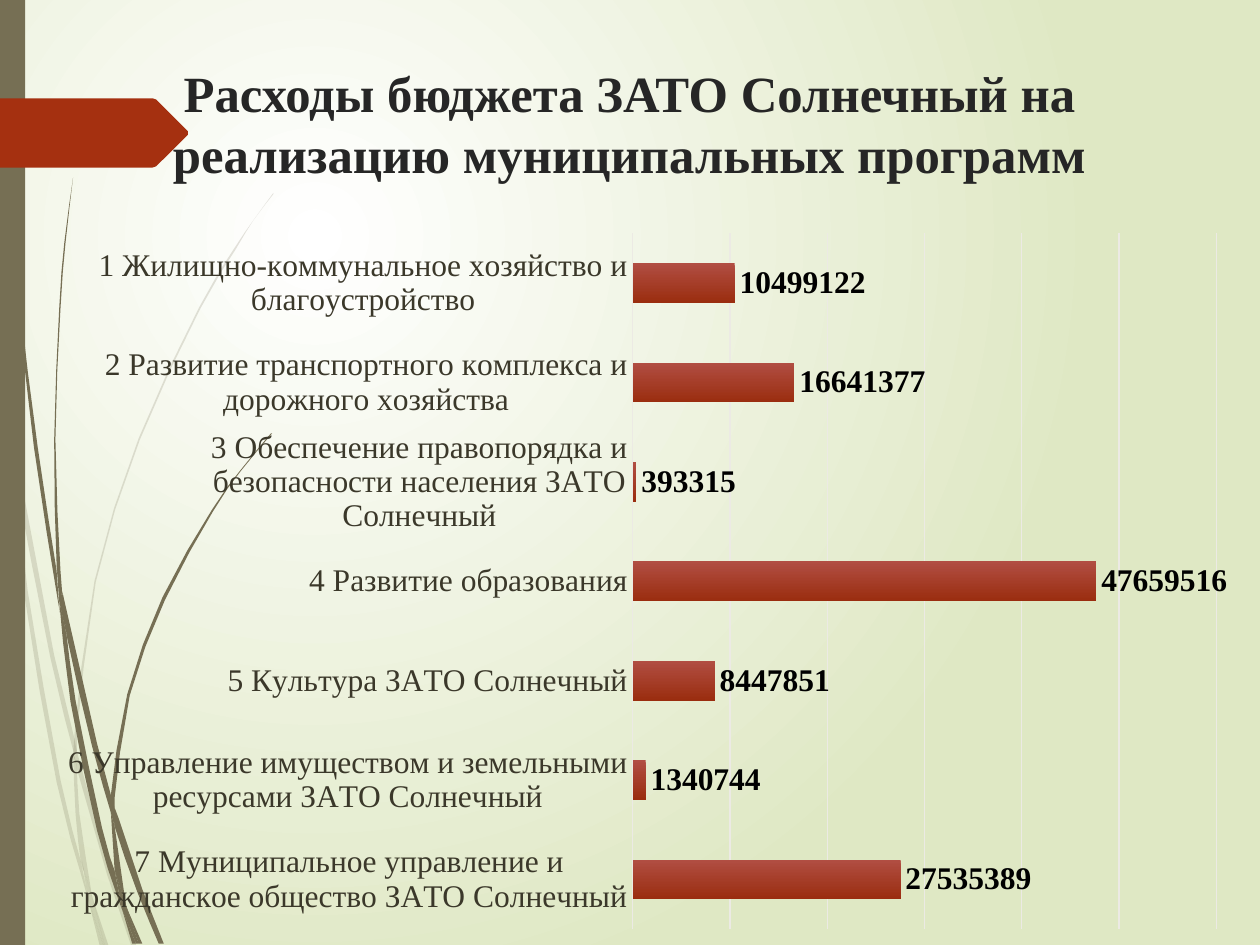
import lxml.etree
import pptx
import pptx.chart.data
import pptx.dml.color
import pptx.enum.chart
import pptx.enum.shapes
import pptx.enum.text
import pptx.oxml
import pptx.oxml.ns
import pptx.util
from pptx.util import Inches

COLORS = {
    "white": "FFFFFF", "meadow": "DFE8C4", "olive": "766F54", "rust": "A53010",
    "title": "262626", "label": "3B382A", "grid": "ECEAE4", "black": "000000",
    "bar_top": "B14E43", "bar_bottom": "9A2D0F",
}
SERIF = "Times New Roman"
TITLE = "Расходы бюджета ЗАТО Солнечный на реализацию муниципальных программ"
PROGRAMS = [
    ("7 Муниципальное управление и гражданское общество ЗАТО Солнечный", 27535389),
    ("6 Управление имуществом и земельными ресурсами ЗАТО Солнечный", 1340744),
    ("5 Культура ЗАТО Солнечный", 8447851),
    ("4 Развитие образования", 47659516),
    ("3 Обеспечение правопорядка и безопасности населения ЗАТО Солнечный", 393315),
    ("2 Развитие транспортного комплекса и дорожного хозяйства", 16641377),
    ("1 Жилищно-коммунальное хозяйство и благоустройство", 10499122),
]
PALE_STRANDS = [
    ([(0.08, 3.5), (0.06, 3.22), (0, 2.82)], [(0, 2.99), (0.07, 3.44), (0.08, 3.5)]),
    ([(0.1, 3.45), (0.43, 5.2), (0.59, 5.86)],
     [(0.59, 5.99), (0.4, 5.22), (0.12, 3.76), (0.1, 3.45)]),
    ([(0.61, 5.96), (0.64, 6.07), (0.88, 6.92), (1.08, 7.5)],
     [(1.04, 7.5), (0.85, 6.94), (0.61, 6.1)]),
    ([(0.73, 7.11), (0.83, 7.5)], [(0.86, 7.5), (0.73, 7.11)]),
    ([(0.08, 3.5), (0.12, 3.76), (0.22, 4.69), (0.48, 6.19), (0.64, 6.83), (0.7, 7.14)],
     [(0.64, 6.93), (0.45, 6.21), (0.19, 4.7), (0.08, 3.5)]),
    ([(0.58, 5.99), (0.61, 6.08), (0.63, 6.46), (0.73, 7.11)],
     [(0.67, 6.92), (0.64, 6.83), (0.6, 6.46), (0.58, 5.99)]),
    ([(2.17, 1.53), (2.01, 1.75), (1.86, 1.97), (1.58, 2.44), (1.1, 3.48), (0.75, 4.61),
      (0.59, 5.84), (0.61, 5.96)],
     [(0.61, 5.84), (0.76, 4.62), (1.11, 3.49), (1.59, 2.45), (1.87, 1.98),
      (2.01, 1.75), (2.17, 1.54)]),
    ([(0.7, 7.14), (0.79, 7.5)], [(0.82, 7.5), (0.7, 7.14)]),
    ([(0.59, 5.86), (0.61, 5.96), (0.61, 6.1)], [(0.61, 6.08), (0.58, 5.99)]),
    ([(0.65, 6.83), (0.7, 7.14), (0.82, 7.5)], [(0.83, 7.5), (0.73, 7.11), (0.67, 6.92)]),
]
DARK_STRANDS = [
    ([(0.02, 0), (0.03, 0.48), (0.05, 1.1), (0.14, 2.33), (0.27, 3.55), (0.46, 4.77), (0.47, 4.81)],
     [(0.45, 4.53), (0.3, 3.55), (0.15, 2.32), (0.06, 1.09), (0.04, 0.48), (0.03, 0)]),
    ([(0.5, 4.72), (0.53, 5.05), (0.73, 5.92), (0.88, 6.45)],
     [(0.88, 6.31), (0.77, 5.9), (0.5, 4.72)]),
    ([(0.91, 6.41), (0.91, 6.56), (1.09, 7.08), (1.26, 7.49)],
     [(1.3, 7.49), (1.13, 7.06), (0.94, 6.49)]),
    ([(0.47, 4.77), (0.56, 5.57), (0.77, 6.59), (0.92, 7.08), (0.97, 7.22)],
     [(0.91, 6.91), (0.81, 6.57), (0.6, 5.56), (0.53, 5.05), (0.47, 4.77)]),
    ([(0.58, 1.41), (0.51, 1.93), (0.47, 2.45), (0.43, 3.49), (0.45, 4.49), (0.49, 4.72)],
     [(0.5, 4.72), (0.48, 4.53), (0.44, 3.49), (0.48, 2.45), (0.52, 1.93), (0.58, 1.41)]),
    ([(1, 7.19), (1.1, 7.49)], [(1.13, 7.49), (1, 7.19)]),
    ([(0.45, 4.49), (0.47, 4.77), (0.53, 5.05)], [(0.5, 4.72), (0.49, 4.72), (0.45, 4.49)]),
    ([(2.15, 3.44), (1.91, 3.73), (1.68, 4.05), (1.29, 4.74), (1.01, 5.51), (0.88, 6.31), (0.91, 6.41)],
     [(0.91, 6.33), (1.03, 5.52), (1.31, 4.76), (1.69, 4.06), (1.91, 3.74), (2.16, 3.44)]),
    ([(0.97, 7.22), (1.05, 7.49)], [(1.08, 7.49), (0.97, 7.22)]),
    ([(0.88, 6.45), (0.91, 6.91), (1, 7.19)], [(0.91, 6.56), (0.88, 6.45)]),
    ([(0.88, 6.31), (0.88, 6.45), (0.91, 6.56)], [(0.91, 6.41), (0.88, 6.31)]),
    ([(0.91, 6.91), (0.97, 7.22), (1.08, 7.49)], [(1.1, 7.49), (0.96, 7.06), (0.91, 6.91)]),
]
ARROW = [(0, 0.78), (1.21, 0.78), (1.24, 0.79), (1.49, 1.04), (1.49, 1.07), (1.24, 1.32), (1.21, 1.33), (0, 1.33)]
PLOT = {"x": 0.482, "y": 0.052, "w": 0.494, "h": 0.948}


def rgb(name):
    return pptx.dml.color.RGBColor.from_string(COLORS[name])


def style_font(font, size, color, bold=False):
    font.name, font.size, font.bold = SERIF, pptx.util.Pt(size), bold
    font.color.rgb = rgb(color)


def paint(shape, color, alpha=None):
    shape.shadow.inherit = False
    shape.fill.solid()
    shape.fill.fore_color.rgb = rgb(color)
    shape.line.fill.background()
    if alpha:
        swatch = shape.fill._xPr.find(".//" + pptx.oxml.ns.qn("a:srgbClr"))
        lxml.etree.SubElement(swatch, pptx.oxml.ns.qn("a:alpha"), val=str(alpha * 1000))


def gradient(fill, first, last):
    fill.gradient()
    for stop, color, position in zip(fill.gradient_stops, (first, last), (0, 1)):
        stop.color.rgb = rgb(color)
        stop.position = position


def smooth(points):
    if len(points) < 4:
        return points
    ends = [points[0], *points, points[-1]]
    curve = [points[0]]
    for a, b, c, d in zip(ends, ends[1:], ends[2:], ends[3:]):
        middle = tuple((9 * (q + r) - p - s) / 16 for p, q, r, s in zip(a, b, c, d))
        curve += [middle, c]
    return curve


def add_outline(shapes, points, color, alpha=None):
    corners = [(Inches(x), Inches(y)) for x, y in points]
    builder = shapes.build_freeform(*corners[0])
    builder.add_line_segments(corners[1:], close=True)
    paint(builder.convert_to_shape(), color, alpha)


def add_backdrop(slide):
    gradient(slide.background.fill, "white", "meadow")
    linear = slide.background._cSld.find(".//" + pptx.oxml.ns.qn("a:lin"))
    linear.getparent().replace(linear, pptx.oxml.parse_xml(
        f'<a:path {pptx.oxml.ns.nsdecls("a")} path="circle">'
        '<a:fillToRect l="50000" t="50000" r="100000" b="100000"/></a:path>'))
    for strands, alpha in ((PALE_STRANDS, 20), (DARK_STRANDS, None)):
        grass = slide.shapes.add_group_shape()
        for down, up in strands:
            add_outline(grass.shapes, smooth(down) + smooth(up), "olive", alpha)
    band = slide.shapes.add_shape(
        pptx.enum.shapes.MSO_SHAPE.RECTANGLE, 0, 0, Inches(0.2), Inches(7.5))
    paint(band, "olive")
    add_outline(slide.shapes, ARROW, "rust")


def add_title(slide):
    box = slide.shapes.add_textbox(Inches(0.5), Inches(0.44), Inches(9), Inches(0.87))
    box.text_frame.word_wrap = True
    para = box.text_frame.paragraphs[0]
    para.alignment = pptx.enum.text.PP_ALIGN.CENTER
    span = para.add_run()
    span.text = TITLE
    style_font(span.font, 29, "title", True)


def add_spending_chart(slide):
    data = pptx.chart.data.CategoryChartData()
    data.categories = [name for name, _ in PROGRAMS]
    data.add_series("Series 1", [amount for _, amount in PROGRAMS])
    chart = slide.shapes.add_chart(
        pptx.enum.chart.XL_CHART_TYPE.BAR_CLUSTERED,
        Inches(0.5), Inches(1.55), Inches(9.38), Inches(5.83), data).chart
    chart.has_legend = chart.has_title = False
    chart.font.name, chart.font.size = "TeX Gyre Adventor", pptx.util.Pt(10)
    chart.font.color.rgb = rgb("black")

    names, amounts = chart.category_axis, chart.value_axis
    names.major_tick_mark = pptx.enum.chart.XL_TICK_MARK.NONE
    style_font(names.tick_labels.font, 18, "label")
    amounts.visible = False
    amounts.minimum_scale, amounts.maximum_scale, amounts.major_unit = 0, 60_000_000, 10_000_000
    for line in (names.format.line, amounts.major_gridlines.format.line):
        line.color.rgb = rgb("grid")
        line.width = pptx.util.Pt(0.75)

    plot = chart.plots[0]
    plot.gap_width, plot.vary_by_categories = 150, False
    bars = plot.series[0].format.fill
    gradient(bars, "bar_top", "bar_bottom")
    bars.gradient_angle = 270
    plot.has_data_labels = True
    labels = plot.data_labels
    labels.show_value = True
    labels.position = pptx.enum.chart.XL_LABEL_POSITION.OUTSIDE_END
    style_font(labels.font, 18, "black", True)

    area = chart._chartSpace.chart.plotArea
    for old in area.findall(pptx.oxml.ns.qn("c:layout")):
        area.remove(old)
    modes = '<c:layoutTarget val="inner"/><c:xMode val="edge"/><c:yMode val="edge"/>'
    sizes = "".join(f'<c:{side} val="{share}"/>' for side, share in PLOT.items())
    area.insert(0, pptx.oxml.parse_xml(
        f'<c:layout {pptx.oxml.ns.nsdecls("c")}><c:manualLayout>{modes}{sizes}'
        '</c:manualLayout></c:layout>'))


def main():
    deck = pptx.Presentation()
    deck.slide_width, deck.slide_height = Inches(10), Inches(7.5)
    slide = deck.slides.add_slide(deck.slide_layouts[6])
    add_backdrop(slide)
    add_title(slide)
    add_spending_chart(slide)
    deck.save("out.pptx")


if __name__ == "__main__":
    main()
